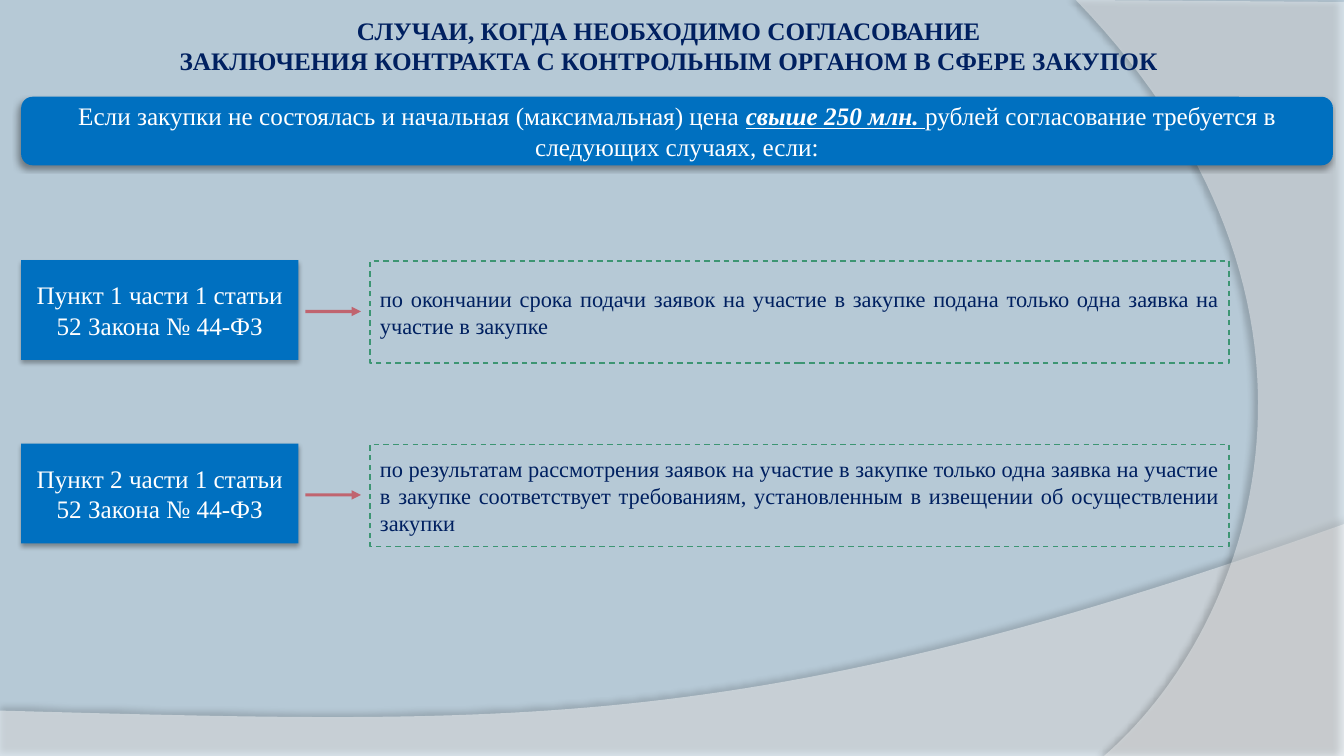
"""Build the slide on cases where a contract needs approval by the procurement control body."""
from copy import deepcopy

from lxml import etree
from pptx import Presentation
from pptx.dml.color import RGBColor
from pptx.enum.dml import MSO_LINE
from pptx.enum.shapes import MSO_CONNECTOR, MSO_SHAPE
from pptx.enum.text import MSO_ANCHOR, PP_ALIGN
from pptx.oxml.ns import qn
from pptx.util import Inches, Pt

RECT, ROUNDED = MSO_SHAPE.RECTANGLE, MSO_SHAPE.ROUNDED_RECTANGLE
CENTER, JUSTIFY = PP_ALIGN.CENTER, PP_ALIGN.JUSTIFY
COLORS = {"background": "B6C9D6", "navy": "002060", "blue": "0070C0", "white": "FFFFFF",
          "green": "3D9573", "red": "C53B45", "black": "000000"}
FONT = "Times New Roman"


def write(shape, *texts, size=18, color="white", align=CENTER, bold=False, emphasis=None):
    """Write runs into a shape; a "\\v" entry breaks the line."""
    frame = shape.text_frame
    frame.word_wrap = True
    frame.vertical_anchor = MSO_ANCHOR.MIDDLE
    paragraph = frame.paragraphs[0]
    paragraph.alignment = align
    for text in texts:
        if text == "\v":
            paragraph.add_line_break()
            paragraph._p[-1].append(deepcopy(run._r.rPr))
            continue
        run = paragraph.add_run()
        run.text = text
        font = run.font
        font.name, font.size, font.bold = FONT, Pt(size), bold
        font.color.rgb = RGBColor.from_string(COLORS[color])
        if text == emphasis:
            font.bold = font.italic = font.underline = True


def fill(shape, color, shadow, opacity=100):
    """Give a shape a borderless fill and a shadow of (opacity, blur, distance, angle)."""
    shape.fill.solid()
    shape.fill.fore_color.rgb = RGBColor.from_string(COLORS[color])
    shape.line.fill.background()
    shape.shadow.inherit = False
    if opacity < 100:
        solid = shape._element.spPr.find(qn("a:solidFill"))
        etree.SubElement(solid[0], qn("a:alpha"), val=str(opacity * 1000))
    strength, blur, distance, angle = shadow
    effects = shape._element.spPr.find(qn("a:effectLst"))
    outer = etree.SubElement(effects, qn("a:outerShdw"), blurRad=str(Pt(blur)),
                             dist=str(Pt(distance)), dir=str(angle * 60000), rotWithShape="0")
    tint = etree.SubElement(outer, qn("a:srgbClr"), val=COLORS["black"])
    etree.SubElement(tint, qn("a:alpha"), val=str(strength * 1000))


prs = Presentation()
prs.slide_width, prs.slide_height = Inches(13.33), Inches(7.5)
slide = prs.slides.add_slide(prs.slide_layouts[5])
slide.background.fill.solid()
slide.background.fill.fore_color.rgb = RGBColor.from_string(COLORS["background"])
shapes = slide.shapes

title = shapes.title
title.left, title.top, title.width, title.height = map(Inches, (0, 0.01, 13.33, 0.88))
frame = title.text_frame
frame.margin_left = frame.margin_right = frame.margin_top = frame.margin_bottom = Inches(0.05)
write(title, "СЛУЧАИ, КОГДА НЕОБХОДИМО СОГЛАСОВАНИЕ ", "\v",
      "ЗАКЛЮЧЕНИЯ КОНТРАКТА С КОНТРОЛЬНЫМ ОРГАНОМ В СФЕРЕ ЗАКУПОК ",
      color="navy", bold=True)

waves = [
    ([(0, 7.05), (0, 7.5), (13.33, 7.5)],
     [(13.33, 5.2), (7.45, 7.29), (5.21, 7.19), (0, 7.05)], 45, (35, 4, 3.5, 270)),
    ([(10.67, 0), (13.33, 0.02), (13.33, 7.5)],
     [(10.95, 7.5), (12.46, 6.19), (13.57, 3), (10.67, 0)], 40, (45, 4, 4, 180)),
]
STEPS = 60
for corners, bezier, opacity, shadow in waves:
    curve = []
    for step in range(STEPS + 1):
        t = step / STEPS
        weights = ((1 - t) ** 3, 3 * t * (1 - t) ** 2, 3 * t ** 2 * (1 - t), t ** 3)
        curve.append(tuple(sum(w * point[axis] for w, point in zip(weights, bezier))
                           for axis in (0, 1)))
    outline = [(Inches(x), Inches(y)) for x, y in corners + curve]
    builder = shapes.build_freeform(*outline[0])
    builder.add_line_segments(outline[1:], close=True)
    wave = builder.convert_to_shape()
    fill(wave, "white", shadow, opacity)
    title._element.addprevious(wave._element)

cases = [
    ("Пункт 1 части 1 статьи 52 Закона № 44-ФЗ",
     "по окончании срока подачи заявок на участие в закупке подана только одна заявка "
     "на участие в закупке"),
    ("Пункт 2 части 1 статьи 52 Закона № 44-ФЗ",
     "по результатам рассмотрения заявок на участие в закупке только одна заявка на участие "
     "в закупке соответствует требованиям, установленным в извещении об осуществлении закупки"),
]
for row, (clause, condition) in enumerate(cases):
    top = 2.58 + 1.82 * row

    clause_box = shapes.add_shape(RECT, Inches(0.21), Inches(top), Inches(2.75), Inches(0.99))
    fill(clause_box, "blue", (32, 3.5, 2.2, 90))
    write(clause_box, clause)

    condition_box = shapes.add_shape(RECT, Inches(3.67), Inches(top + 0.01),
                                     Inches(8.52), Inches(1.01))
    condition_box.fill.background()
    condition_box.shadow.inherit = False
    condition_box.line.color.rgb = RGBColor.from_string(COLORS["green"])
    condition_box.line.width = Pt(1)
    condition_box.line.dash_style = MSO_LINE.DASH
    write(condition_box, condition, size=16, color="navy", align=JUSTIFY)

    arrow_y = Inches(top + 0.51)
    arrow = shapes.add_connector(MSO_CONNECTOR.STRAIGHT, Inches(3.03), arrow_y,
                                 Inches(3.58), arrow_y)
    arrow.line.color.rgb = RGBColor.from_string(COLORS["red"])
    arrow.line.width = Pt(2.25)
    stroke = arrow.line._get_or_add_ln()
    etree.SubElement(stroke.find(qn("a:solidFill"))[0], qn("a:alpha"), val="71000")
    etree.SubElement(stroke, qn("a:tailEnd"), type="triangle")
    etree.SubElement(arrow._element.spPr, qn("a:effectLst"))

threshold = "свыше 250 млн. "
banner = shapes.add_shape(ROUNDED, Inches(0.21), Inches(0.96), Inches(13.01), Inches(0.68))
fill(banner, "blue", (40, 4, 3, 135))
write(banner, "Если закупки не состоялась и начальная (максимальная) цена ", threshold,
      "рублей согласование требуется в следующих случаях, если:", emphasis=threshold)

prs.save("out.pptx")
